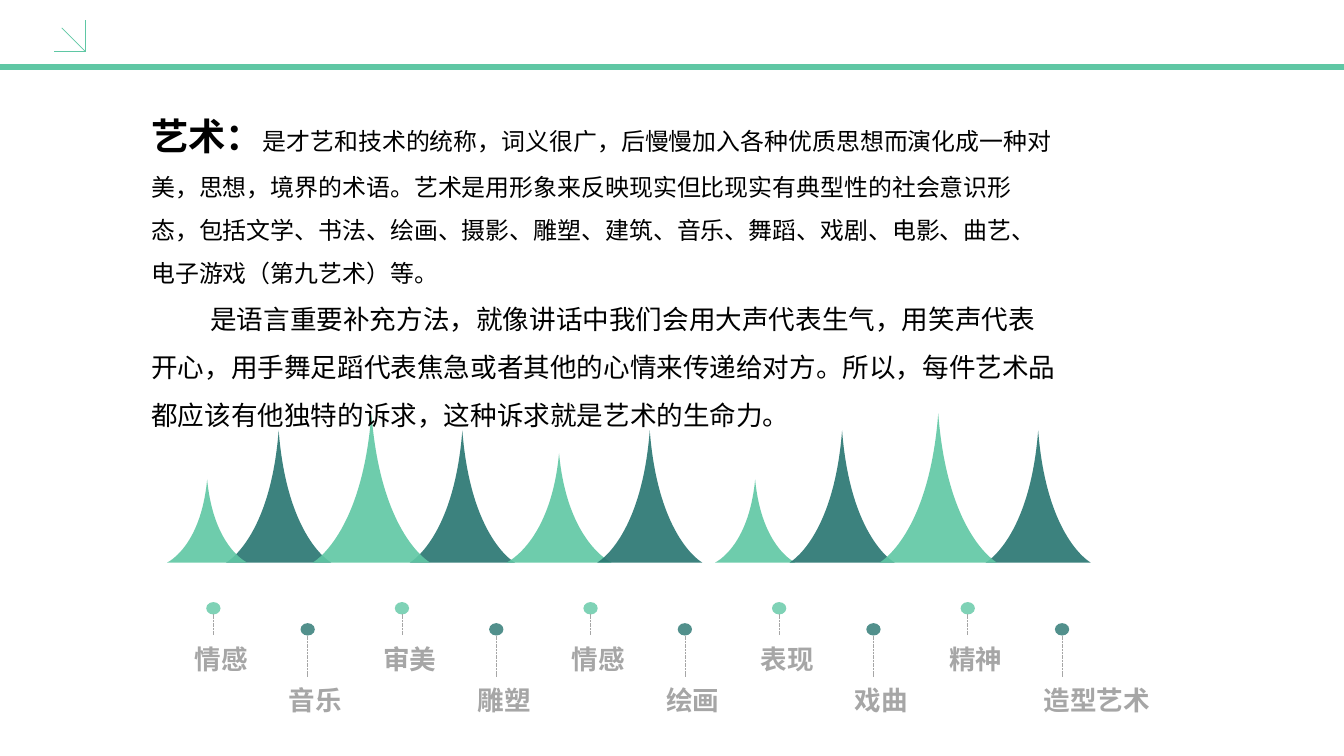
"""Build the slide that defines art above a row of peaks and labelled facets."""
from lxml import etree
from pptx import Presentation
from pptx.dml.color import RGBColor
from pptx.enum.dml import MSO_LINE
from pptx.enum.shapes import MSO_CONNECTOR, MSO_SHAPE
from pptx.enum.text import MSO_AUTO_SIZE, PP_ALIGN
from pptx.oxml.ns import qn
from pptx.util import Cm, Pt

STRAIGHT = MSO_CONNECTOR.STRAIGHT
OVAL = MSO_SHAPE.OVAL
DASHED = MSO_LINE.SQUARE_DOT
CENTER = PP_ALIGN.CENTER
GROW = MSO_AUTO_SIZE.SHAPE_TO_FIT_TEXT

COLORS = {"mint": "5FC7A4", "teal": "277570", "gray": "A6A6A6", "black": "000000"}

TERM = "艺术："
DEFINITION = (
    "是才艺和技术的统称，词义很广，后慢慢加入各种优质思想而演化成一种对美，思想，境界的术语。"
    "艺术是用形象来反映现实但比现实有典型性的社会意识形态，包括文学、书法、绘画、摄影、雕塑、"
    "建筑、音乐、舞蹈、戏剧、电影、曲艺、电子游戏（第九艺术）等。"
)
APPEAL = (
    "是语言重要补充方法，就像讲话中我们会用大声代表生气，用笑声代表开心，"
    "用手舞足蹈代表焦急或者其他的心情来传递给对方。所以，每件艺术品都应该有他独特的诉求，"
    "这种诉求就是艺术的生命力。"
)
PARAGRAPHS = [
    (0, [(TERM, 28, True), (DEFINITION, 18, False)]),
    (1.57, [(APPEAL, 20, False)]),
]
FACETS = ["情感", "音乐", "审美", "雕塑", "情感", "绘画", "表现", "戏曲", "精神", "造型艺术"]

PEAK_SIZES = {
    "small": (2.13, 2.21, "mint"),
    "low": (2.79, 2.9, "mint"),
    "middle": (2.79, 3.51, "teal"),
    "tall": (3.12, 3.96, "mint"),
}
PEAKS = [
    ("middle", 6.01), ("middle", 10.89), ("small", 4.44), ("tall", 8.31), ("low", 13.46),
    ("middle", 15.87), ("small", 19), ("middle", 20.98), ("middle", 26.19), ("tall", 23.37),
]
BASELINE = 14.95
FLANKS = [
    [(1, 1), (0.58, 0.82), (0.5, 0)],
    [(0.42, 0.82), (0, 1), (0, 1)],
]

FACET_ROWS = [
    {"color": "mint", "dot": 16, "stem_end": 16.89, "label": 16.92},
    {"color": "teal", "dot": 16.56, "stem_end": 17.98, "label": 18.01},
]
FIRST_FACET, LAST_FACET = 5.67, 28.22
FACET_PITCH = (LAST_FACET - FIRST_FACET) / (len(FACETS) - 1)
DOT_W, DOT_H = 0.38, 0.33
CHAR_W, LABEL_H, LABEL_SHIFT = 0.71, 0.94, 0.5

SLIDE_W, SLIDE_H = 35.71, 20.09
HEADER_Y = 1.78
CORNER = (2.27, 1.37)
CORNER_TAILS = [(1.44, 1.37), (2.27, 0.52), (1.64, 0.74)]


def rgb(name):
    return RGBColor.from_string(COLORS[name])


def paint(shape, color, opacity):
    shape.shadow.inherit = False
    shape.line.fill.background()
    shape.fill.solid()
    shape.fill.fore_color.rgb = rgb(color)
    tint = shape._element.spPr.find(qn("a:solidFill"))[0]
    etree.SubElement(tint, qn("a:alpha")).set("val", str(opacity * 1000))


def add_line(slide, start, end, color, width, dash=None):
    line = slide.shapes.add_connector(STRAIGHT, *map(Cm, (*start, *end)))
    line.line.color.rgb = rgb(color)
    line.line.width = Pt(width)
    if dash:
        line.line.dash_style = dash
    etree.SubElement(line._element.spPr, qn("a:effectLst"))


def add_run(paragraph, text, size, bold, font, color):
    run = paragraph.add_run()
    run.text = text
    run.font.size = Pt(size)
    run.font.bold = bold
    run.font.name = font
    run.font.color.rgb = rgb(color)


def add_peak(slide, size, left):
    width, height, color = PEAK_SIZES[size]
    top = BASELINE - height
    builder = slide.shapes.build_freeform(Cm(left + width), Cm(BASELINE))
    builder.add_line_segments(
        [(Cm(left + width / 2), Cm(top)), (Cm(left), Cm(BASELINE))], close=True)
    peak = builder.convert_to_shape()
    sides = list(peak._element.spPr.iter(qn("a:lnTo")))
    for side, flank in zip(sides, FLANKS):
        curve = etree.Element(qn("a:cubicBezTo"))
        for x, y in flank:
            point = etree.SubElement(curve, qn("a:pt"))
            point.set("x", str(round(x * peak.width)))
            point.set("y", str(round(y * peak.height)))
        side.getparent().replace(side, curve)
    paint(peak, color, 90)


def add_facet(slide, index, name):
    row = FACET_ROWS[index % 2]
    axis = FIRST_FACET + index * FACET_PITCH
    dot = slide.shapes.add_shape(
        OVAL, Cm(axis - DOT_W / 2), Cm(row["dot"]), Cm(DOT_W), Cm(DOT_H))
    paint(dot, row["color"], 80)
    add_line(slide, (axis, row["dot"] + DOT_H), (axis, row["stem_end"]), "gray", 0.5, DASHED)
    label = slide.shapes.add_textbox(
        Cm(axis - LABEL_SHIFT), Cm(row["label"]), Cm(CHAR_W * len(name)), Cm(LABEL_H))
    frame = label.text_frame
    frame.margin_left = frame.margin_right = frame.margin_top = frame.margin_bottom = 0
    frame.word_wrap = False
    frame.auto_size = GROW
    paragraph = frame.paragraphs[0]
    paragraph.alignment = CENTER
    paragraph.line_spacing = 1.2
    add_run(paragraph, name, 20, True, "Arial", "gray")


def add_explanation(slide):
    frame = slide.shapes.add_textbox(Cm(3.77), Cm(2.3), Cm(24.55), Cm(9.37)).text_frame
    frame.word_wrap = True
    frame.auto_size = GROW
    for index, (indent, runs) in enumerate(PARAGRAPHS):
        paragraph = frame.add_paragraph() if index else frame.paragraphs[0]
        paragraph.line_spacing = 1.5
        layout = paragraph._p.get_or_add_pPr()
        layout.set("indent", str(Cm(indent)))
        layout.set("hangingPunct", "0")
        for text, size, bold in runs:
            add_run(paragraph, text, size, bold, "Calibri", "black")


def main():
    deck = Presentation()
    deck.slide_width, deck.slide_height = Cm(SLIDE_W), Cm(SLIDE_H)
    slide = deck.slides.add_slide(deck.slide_layouts[6])
    add_line(slide, (0, HEADER_Y), (SLIDE_W, HEADER_Y), "mint", 4.5)
    for tail in CORNER_TAILS:
        add_line(slide, CORNER, tail, "mint", 0.5)
    for size, left in PEAKS:
        add_peak(slide, size, left)
    for index, name in enumerate(FACETS):
        add_facet(slide, index, name)
    add_explanation(slide)
    deck.save("out.pptx")


if __name__ == "__main__":
    main()
